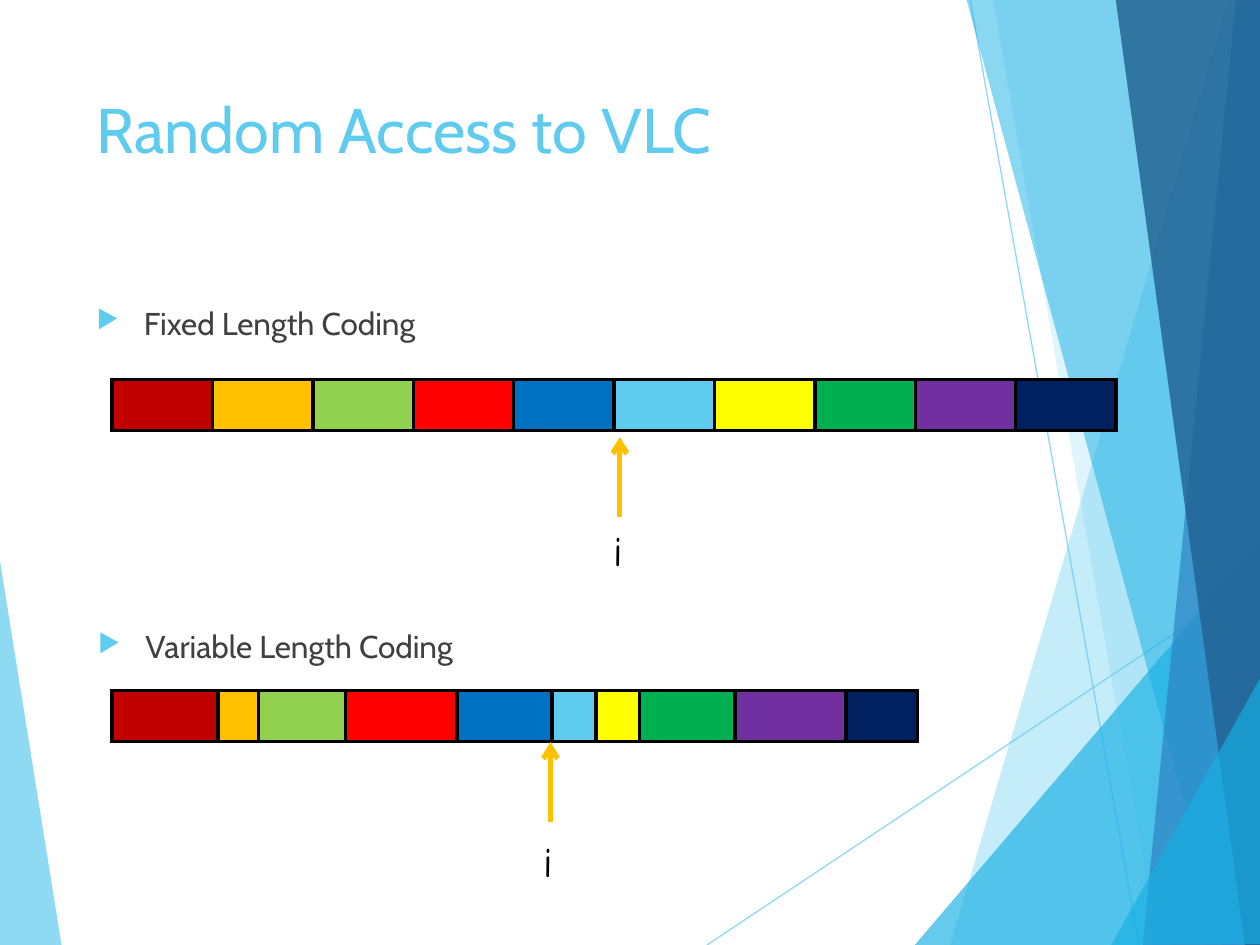
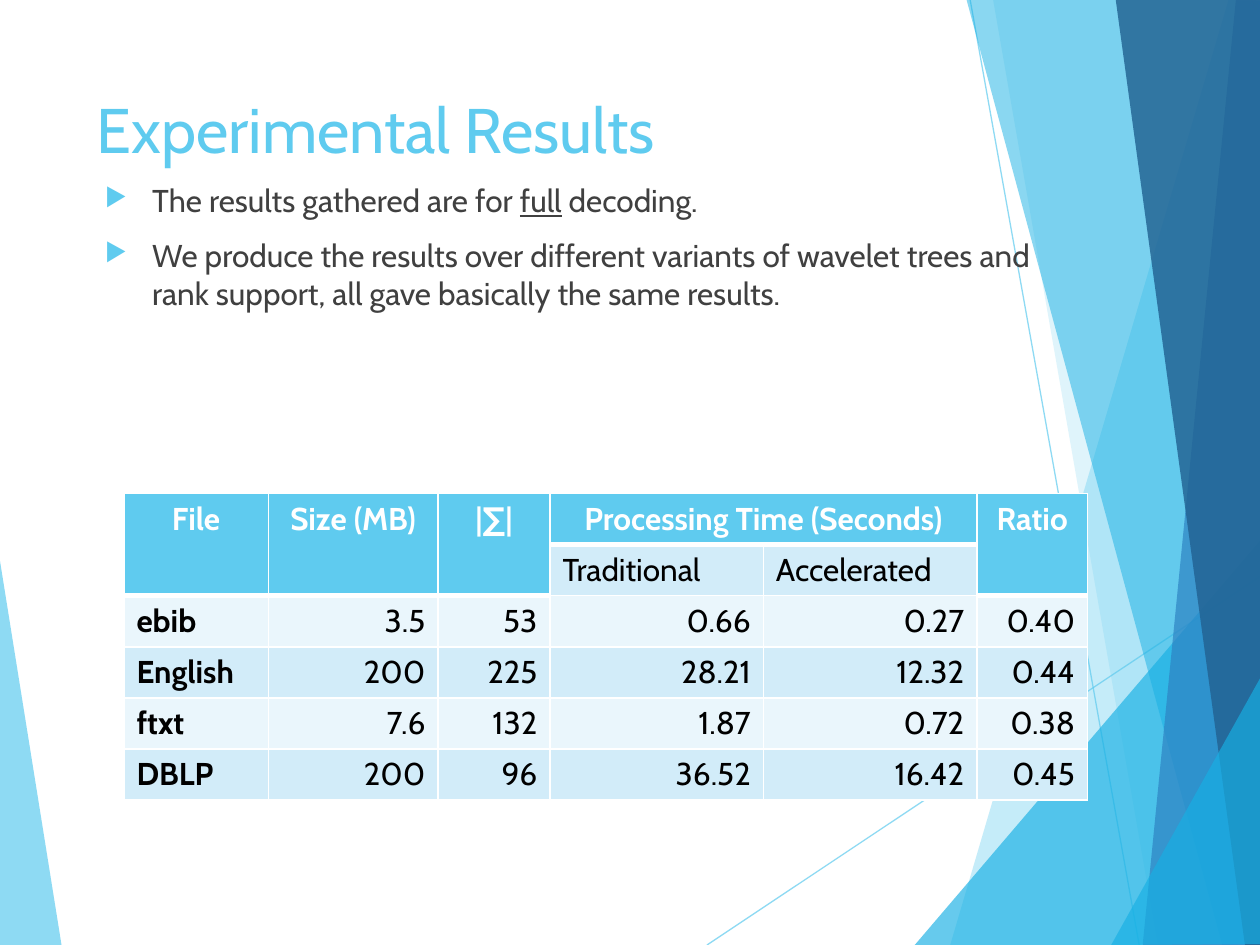
from dataclasses import dataclass

from lxml.etree import SubElement
from pptx import Presentation
from pptx.dml.color import RGBColor
from pptx.enum.shapes import MSO_CONNECTOR
from pptx.enum.text import MSO_ANCHOR, PP_ALIGN as Align
from pptx.oxml import parse_xml
from pptx.oxml.ns import nsdecls, qn
from pptx.util import Pt

SKY = RGBColor(0x5F, 0xCB, 0xEF)
CYAN = RGBColor(0x17, 0xB0, 0xE4)
BLUE = RGBColor(0x2E, 0x83, 0xC3)
NAVY = RGBColor(0x22, 0x62, 0x92)
AMBER = RGBColor(0xFF, 0xC0, 0x00)
GREY = RGBColor(0x40, 0x40, 0x40)
BLACK = RGBColor(0x00, 0x00, 0x00)
WHITE = RGBColor(0xFF, 0xFF, 0xFF)
LIGHT_BAND = RGBColor(0xEA, 0xF6, 0xFC)
DARK_BAND = RGBColor(0xD2, 0xEC, 0xF9)
CODE_COLOURS = [
    RGBColor(0xC0, 0x00, 0x00), AMBER, RGBColor(0x92, 0xD0, 0x50),
    RGBColor(0xFF, 0x00, 0x00), RGBColor(0x00, 0x70, 0xC0), SKY,
    RGBColor(0xFF, 0xFF, 0x00), RGBColor(0x00, 0xB0, 0x50),
    RGBColor(0x70, 0x30, 0xA0), RGBColor(0x00, 0x20, 0x60),
]
MAIN_FONT = "Cabin"
INDEX_FONT = "Comic Neue"
LEFT = 48.2
ROW_HEIGHT = 29.2


@dataclass(frozen=True)
class Facet:
    colour: RGBColor
    opacity: int
    points: tuple


@dataclass(frozen=True)
class CodeStrip:
    top: float
    widths: list
    arrow_x: float
    arrow_top: float
    index_top: float


FACETS_BEHIND = [
    Facet(SKY, 70, ((-0.7, 316), (35.3, 540.7), (-0.7, 540))),
]
RAYS = [((404, 540), (720.7, 329)), ((554.4, 0), (651, 540))]
FACETS_FRONT = [
    Facet(SKY, 36, ((702, 0), (543, 540), (721.4, 540.7), (720.7, 0.7))),
    Facet(SKY, 20, ((567.4, -0.7), (661.7, 540), (720.7, 540), (720.7, -0.7))),
    Facet(CYAN, 66, ((522.7, 540), (720, 309), (720.7, 540))),
    Facet(CYAN, 50, ((552.2, -0.7), (698.4, 540), (720.7, 539.3), (720.7, -0.7))),
    Facet(BLUE, 70, ((706.3, -0.7), (653, 540), (720.7, 540), (720, -0.7))),
    Facet(NAVY, 82, ((637.5, -0.7), (711.4, 540), (721.4, 540), (720, -0.7))),
    Facet(CYAN, 66, ((635, 540), (721.4, 385.2), (721.4, 539.3))),
]

CODE_STRIPS = [
    CodeStrip(216.7, [57.4] * 10, 354.2, 249.8, 295.9),
    CodeStrip(394.6, [60.5, 23, 50, 63.5, 54.5, 25, 25, 54.5, 63.5, 41],
              314.6, 424.1, 473.8),
]

RESULT_WIDTHS = [82.5, 97, 64, 122, 122, 63.3]
TIME_COLUMNS = (3, 4)
RESULTS = [
    ["File", "Size (MB)", "|∑|", "Processing Time (Seconds)", "", "Ratio"],
    ["", "", "", "Traditional", "Accelerated", ""],
    ["ebib", "3.5", "53", "0.66", "0.27", "0.40"],
    ["English", "200", "225", "28.21", "12.32", "0.44"],
    ["ftxt", "7.6", "132", "1.87", "0.72", "0.38"],
    ["DBLP", "200", "96", "36.52", "16.42", "0.45"],
]


def set_opacity(fill_parent, percent: int) -> None:
    colour = next(fill_parent.iter(qn("a:srgbClr")))
    SubElement(colour, qn("a:alpha"), val=str(percent * 1000))


def add_facet(page, facet: Facet) -> None:
    points = [(Pt(x), Pt(y)) for x, y in facet.points]
    builder = page.shapes.build_freeform(*points[0])
    builder.add_line_segments(points[1:], close=True)
    shape = builder.convert_to_shape()
    shape.shadow.inherit = False
    shape.fill.solid()
    shape.fill.fore_color.rgb = facet.colour
    shape.line.fill.background()
    set_opacity(shape.fill._xPr, facet.opacity)


def add_line(page, start: tuple, end: tuple, colour: RGBColor, width: float):
    line = page.shapes.add_connector(
        MSO_CONNECTOR.STRAIGHT, *(Pt(value) for value in start + end))
    line.line.color.rgb = colour
    line.line.width = Pt(width)
    SubElement(line._element.spPr, qn("a:effectLst"))
    return line


def style_text(para, size: float, colour: RGBColor, font: str = MAIN_FONT,
               bold: bool = False) -> None:
    para.font.size = Pt(size)
    para.font.name = font
    para.font.color.rgb = colour
    para.font.bold = bold


def add_text_box(page, left: float, top: float, width: float, height: float,
                 wrap: bool = True):
    box = page.shapes.add_textbox(Pt(left), Pt(top), Pt(width), Pt(height))
    frame = box.text_frame
    frame.word_wrap = wrap
    frame.vertical_anchor = MSO_ANCHOR.TOP
    return frame


def add_page(deck, title: str, title_width: float):
    """Add a slide with the faceted background and its title."""
    page = deck.slides.add_slide(deck.slide_layouts[6])
    for facet in FACETS_BEHIND:
        add_facet(page, facet)
    for start, end in RAYS:
        ray = add_line(page, start, end, SKY, 0.75)
        set_opacity(ray.line._ln, 70)
    for facet in FACETS_FRONT:
        add_facet(page, facet)
    para = add_text_box(page, LEFT, LEFT, title_width, 103.7).paragraphs[0]
    para.text = title
    style_text(para, 36, SKY)
    return page


def add_bullets(page, left: float, top: float, width: float, height: float,
                texts: list, margin: float = 27) -> None:
    """Add bulleted paragraphs; words between underscores are underlined."""
    frame = add_text_box(page, left, top, width, height)
    for number, text in enumerate(texts):
        para = frame.add_paragraph() if number else frame.paragraphs[0]
        para.space_before = Pt(10)
        props = para._p.get_or_add_pPr()
        props.set("marL", str(Pt(margin)))
        props.set("indent", str(Pt(-27)))
        bullet_colour = SubElement(props, qn("a:buClr"))
        SubElement(bullet_colour, qn("a:srgbClr"), val=str(SKY))
        SubElement(props, qn("a:buSzPct"), val="80000")
        SubElement(props, qn("a:buChar"), char="▶")
        style_text(para, 18, GREY)
        for position, part in enumerate(text.split("_")):
            span = para.add_run()
            span.text = part
            if position % 2:
                span.font.underline = True


def add_plain_table(page, left: float, top: float, widths: list, rows: int):
    frame = page.shapes.add_table(rows, len(widths), Pt(left), Pt(top),
                                  Pt(sum(widths)), Pt(rows * ROW_HEIGHT))
    table = frame.table
    table.first_row = table.horz_banding = False
    for column, width in zip(table.columns, widths):
        column.width = Pt(width)
    for row in table.rows:
        row.height = Pt(ROW_HEIGHT)
    return table


def paint_cell(cell, fill: RGBColor, line: RGBColor, side: float,
               top: float, bottom: float) -> None:
    """Fill a cell and draw its four borders, with widths in points."""
    cell.fill.solid()
    cell.fill.fore_color.rgb = fill
    props = cell._tc.get_or_add_tcPr()
    edges = {"lnL": side, "lnR": side, "lnT": top, "lnB": bottom}
    for position, (edge, width) in enumerate(edges.items()):
        props.insert(position, parse_xml(
            f'<a:{edge} {nsdecls("a")} w="{Pt(width)}"><a:solidFill>'
            f'<a:srgbClr val="{line}"/></a:solidFill></a:{edge}>'))


def add_code_strip(page, strip: CodeStrip) -> None:
    """Add a row of code words with an arrow to the word at index i."""
    table = add_plain_table(page, 64.1, strip.top, strip.widths, 1)
    for cell, colour in zip(table.rows[0].cells, CODE_COLOURS):
        paint_cell(cell, colour, BLACK, 2.25, 2.25, 2.25)
    arrow = add_line(page, (strip.arrow_x, strip.arrow_top),
                     (strip.arrow_x, strip.arrow_top + 45.4), AMBER, 3)
    SubElement(arrow.line._ln, qn("a:headEnd"), type="arrow")
    frame = add_text_box(page, strip.arrow_x - 10.8, strip.index_top, 21.6, 36,
                         wrap=False)
    para = frame.paragraphs[0]
    para.text = "i"
    style_text(para, 24, BLACK, INDEX_FONT)


def rule_below(row: int, column: int) -> float:
    """Width of the line under a cell: heavy under the header cells."""
    return 3 if row == 0 or (row == 1 and column not in TIME_COLUMNS) else 1


def add_results_table(page) -> None:
    table = add_plain_table(page, 70.8, 282, RESULT_WIDTHS, len(RESULTS))
    for row, values in enumerate(RESULTS):
        for column, value in enumerate(values):
            cell = table.cell(row, column)
            is_header = row == 0 or (row == 1 and column not in TIME_COLUMNS)
            band = DARK_BAND if row % 2 else LIGHT_BAND
            paint_cell(cell, SKY if is_header else band, WHITE, 1,
                       rule_below(row - 1, column) if row else 1,
                       rule_below(row, column))
            para = cell.text_frame.paragraphs[0]
            para.text = value
            if is_header:
                para.alignment = Align.CENTER
            elif row > 1 and column > 0:
                para.alignment = Align.RIGHT
            style_text(para, 18, WHITE if is_header else BLACK,
                       bold=is_header or column == 0)
    for column in range(len(RESULT_WIDTHS)):
        if column not in TIME_COLUMNS:
            table.cell(0, column).merge(table.cell(1, column))
    first, last = TIME_COLUMNS
    table.cell(0, first).merge(table.cell(0, last))


def build_random_access(deck) -> None:
    page = add_page(deck, "Random Access to VLC", 538.6)
    for strip in CODE_STRIPS:
        add_code_strip(page, strip)
    add_bullets(page, LEFT, 170, 499.7, 305.3, ["Fixed Length Coding"])
    add_bullets(page, 49, 355, 229, 28.8, ["Variable Length Coding"])


def build_results(deck) -> None:
    page = add_page(deck, "Experimental Results", 499.7)
    add_bullets(page, LEFT, 100, 555.8, 305.3, [
        "The results gathered are for _full_ decoding.",
        "We produce the results over different variants of wavelet trees and "
        "rank support, all gave basically the same results.",
    ], margin=31.7)
    add_results_table(page)


def main() -> None:
    deck = Presentation()
    deck.slide_width, deck.slide_height = Pt(720), Pt(540)
    build_random_access(deck)
    build_results(deck)
    deck.save("out.pptx")


if __name__ == "__main__":
    main()
